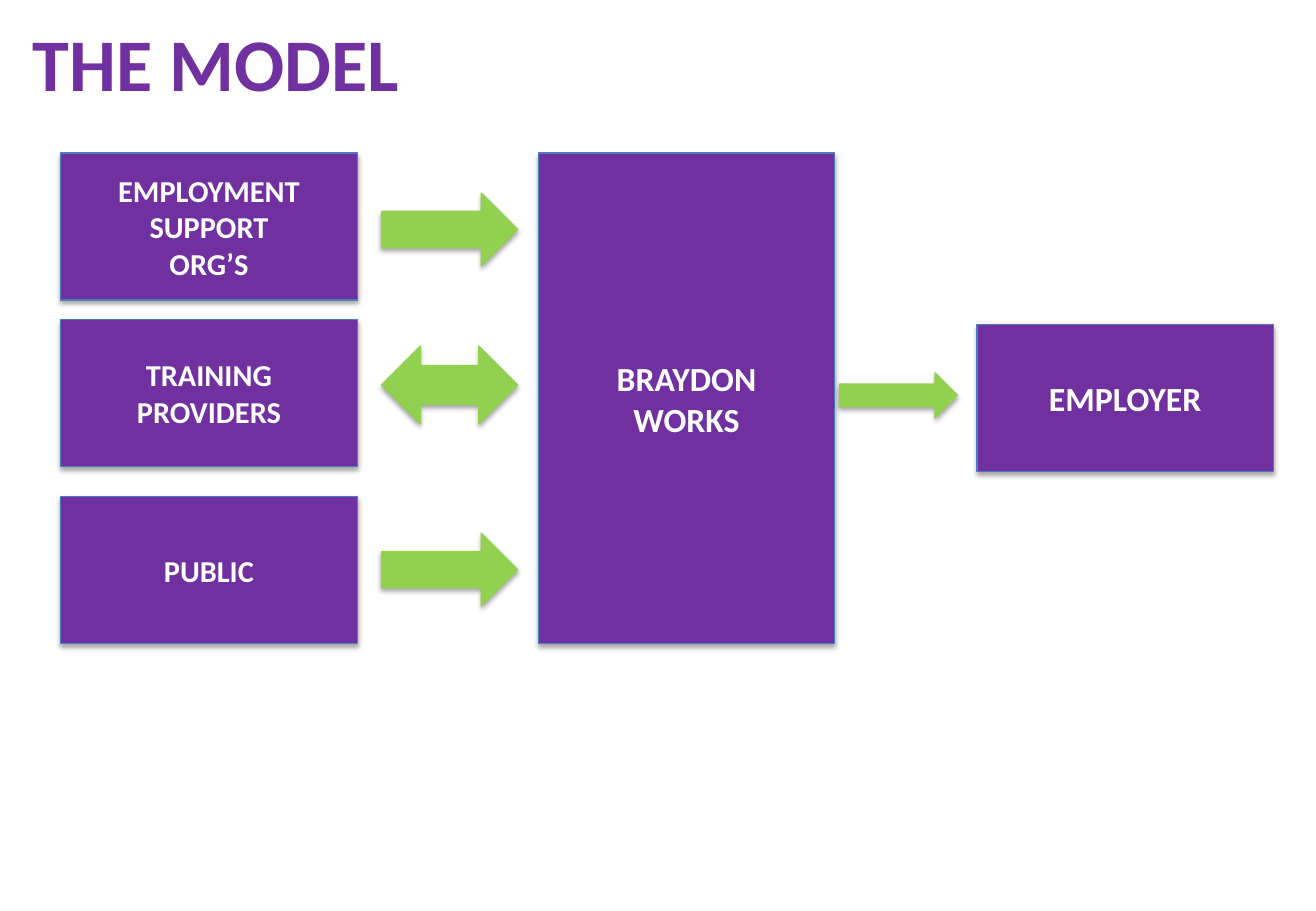
from lxml import etree
from pptx import Presentation
from pptx.dml.color import RGBColor
from pptx.enum import shapes, text
from pptx.oxml import ns
from pptx.util import Inches, Pt

PURPLE = RGBColor(0x70, 0x30, 0xA0)
GREEN = RGBColor(0x92, 0xD0, 0x50)
BLUE = RGBColor(0x4B, 0x7E, 0xBC)
WHITE = RGBColor(0xFF, 0xFF, 0xFF)
BLACK = RGBColor(0, 0, 0)
KIND = shapes.MSO_SHAPE

BOX_W, BOX_H = 2.44, 1.21
TOP = 1.26


def write(para, words, size, color):
    run = para.add_run()
    run.text = words
    font = run.font
    font.name, font.size, font.bold = "Calibri", Pt(size), True
    font.color.rgb = color


def add_shadow(shape):
    """Give the shape a soft shadow straight below it."""
    shape.shadow.inherit = False
    effects = shape._element.spPr.find(ns.qn("a:effectLst"))
    outer = etree.SubElement(
        effects, ns.qn("a:outerShdw"), blurRad=str(Pt(3.1)),
        dist=str(Pt(1.8)), dir="5400000", rotWithShape="0")
    color = etree.SubElement(outer, ns.qn("a:srgbClr"), val=str(BLACK))
    etree.SubElement(color, ns.qn("a:alpha"), val="35000")


def add_block(slide, kind, box, fill, line):
    shape = slide.shapes.add_shape(kind, *map(Inches, box))
    shape.fill.solid()
    shape.fill.fore_color.rgb = fill
    shape.line.color.rgb = line
    shape.line.width = Pt(0.75)
    add_shadow(shape)
    return shape


def add_party(slide, box, lines, size):
    """Draw a purple box with one centred paragraph per line."""
    shape = add_block(slide, KIND.RECTANGLE, box, PURPLE, BLUE)
    frame = shape.text_frame
    frame.word_wrap = True
    frame.vertical_anchor = text.MSO_ANCHOR.MIDDLE
    frame.margin_left = frame.margin_right = Inches(0.36)
    for i, words in enumerate(lines):
        para = frame.add_paragraph() if i else frame.paragraphs[0]
        para.alignment = text.PP_ALIGN.CENTER
        write(para, words, size, WHITE)


def add_arrow(slide, kind, box):
    add_block(slide, kind, box, GREEN, GREEN)


def add_title(slide, box, words):
    title = slide.shapes.title
    title.left, title.top, title.width, title.height = map(Inches, box)
    frame = title.text_frame
    frame.vertical_anchor = text.MSO_ANCHOR.MIDDLE
    para = frame.paragraphs[0]
    para.alignment = text.PP_ALIGN.LEFT
    write(para, words, 44, PURPLE)


def add_sources(slide, left, rows):
    """Draw the left column: each party and its arrow to the hub."""
    for top, lines, kind, arrow_top, high in rows:
        add_party(slide, (left, top, BOX_W, BOX_H), lines, 18)
        add_arrow(slide, kind, (left + 2.64, arrow_top, 1.12, high))


def add_hub(slide, left, top):
    """Draw the hub, the employer and the arrow between them."""
    add_party(slide, (left, top, BOX_W, 4.04), ["BRAYDON WORKS"], 20)
    add_arrow(slide, KIND.RIGHT_ARROW, (left + 2.48, top + 1.81, 0.97, 0.37))
    add_party(slide, (left + 3.61, top + 1.41, BOX_W, BOX_H), ["EMPLOYER"], 20)


def main():
    deck = Presentation()
    deck.slide_width, deck.slide_height = Inches(10.83), Inches(7.5)
    slide = deck.slides.add_slide(deck.slide_layouts[5])
    add_title(slide, (0.17, 0.07, 8.29, 0.88), "THE MODEL")
    add_hub(slide, 4.43, TOP)
    add_sources(slide, 0.5, [
        (TOP, ["EMPLOYMENT SUPPORT", "ORG’S"], KIND.RIGHT_ARROW, 1.59, 0.6),
        (2.63, ["TRAINING PROVIDERS"], KIND.LEFT_RIGHT_ARROW, 2.85, 0.64),
        (4.09, ["PUBLIC"], KIND.RIGHT_ARROW, 4.39, 0.6),
    ])
    deck.save("out.pptx")


if __name__ == "__main__":
    main()
